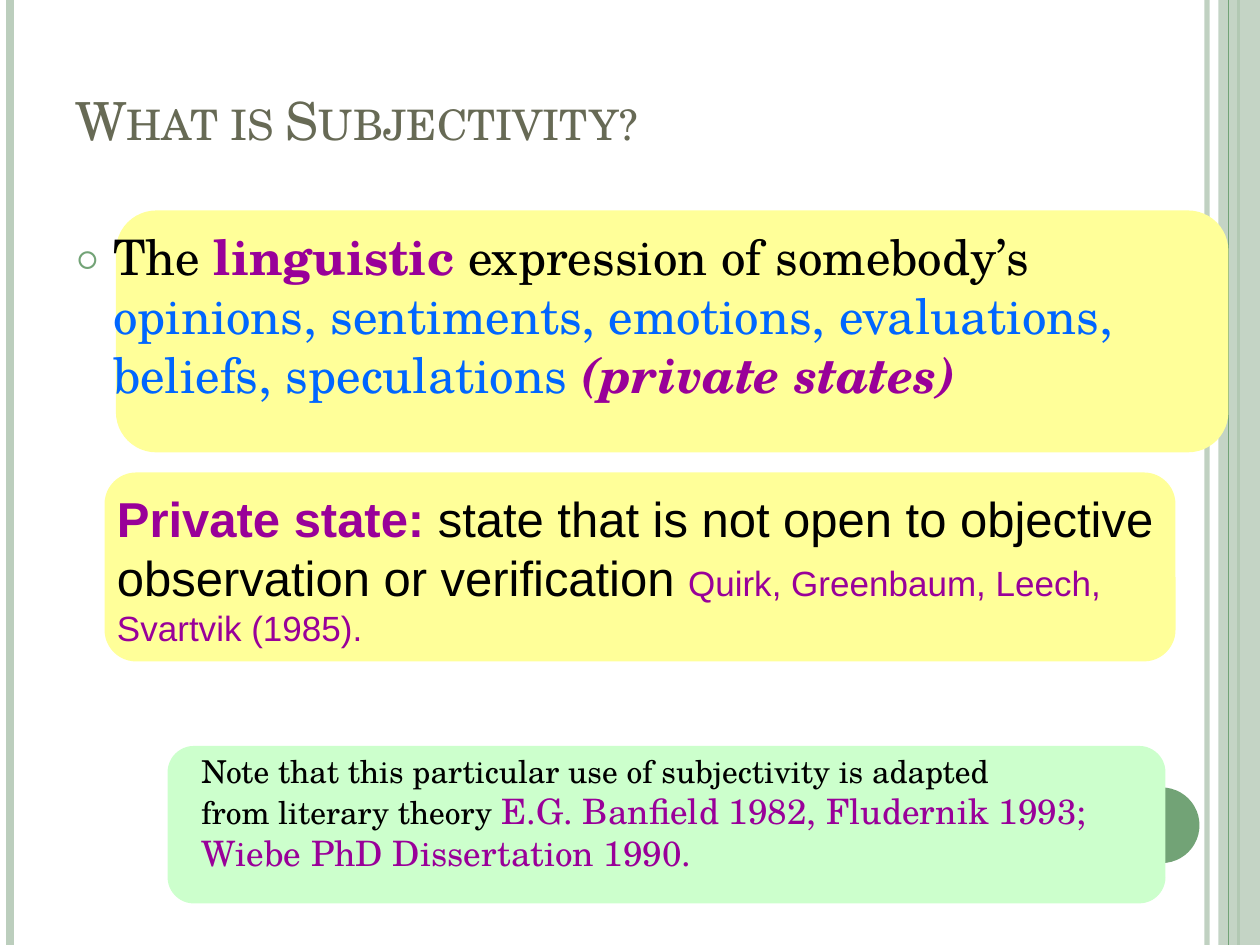
from lxml import etree
from pptx import Presentation
from pptx.dml.color import RGBColor
from pptx.enum.shapes import MSO_CONNECTOR, MSO_SHAPE
from pptx.enum.text import MSO_ANCHOR
from pptx.oxml.ns import qn
from pptx.util import Inches, Pt

STRAIGHT = MSO_CONNECTOR.STRAIGHT
RECTANGLE = MSO_SHAPE.RECTANGLE
ROUNDED = MSO_SHAPE.ROUNDED_RECTANGLE
OVAL = MSO_SHAPE.OVAL
TOP, BOTTOM = MSO_ANCHOR.TOP, MSO_ANCHOR.BOTTOM

SERIF = "TeX Gyre Schola"
SANS = "Arial"
COLORS = {
    "pale_green": "BCCEBD",
    "green": "72A376",
    "yellow": "FFFF99",
    "mint": "CCFFCC",
    "olive": "676A55",
    "black": "000000",
    "purple": "990099",
    "blue": "0066FF",
}


def rgb(name):
    return RGBColor.from_string(COLORS[name])


def set_alpha(fill_parent, percent):
    color = fill_parent.find(".//" + qn("a:srgbClr"))
    etree.SubElement(color, qn("a:alpha"), val=str(percent * 1000))


def add_rule(page, x, color, width, alpha=None):
    rule = page.shapes.add_connector(STRAIGHT, Inches(x), 0, Inches(x), Inches(7.5))
    rule.line.color.rgb = rgb(color)
    rule.line.width = Pt(width)
    properties = rule._element.spPr
    if alpha:
        set_alpha(properties, alpha)
    etree.SubElement(properties, qn("a:effectLst"))


def add_panel(page, kind, place, color, alpha=None):
    panel = page.shapes.add_shape(kind, *map(Inches, place))
    panel.shadow.inherit = False
    panel.fill.solid()
    panel.fill.fore_color.rgb = rgb(color)
    panel.line.fill.background()
    if alpha:
        set_alpha(panel._element.spPr, alpha)
    if kind == ROUNDED:
        panel.adjustments[0] = 0.167


def add_text_box(page, place, anchor=TOP, wrap=True):
    box = page.shapes.add_textbox(*map(Inches, place))
    box.text_frame.word_wrap = wrap
    box.text_frame.vertical_anchor = anchor
    return box


def add_span(para, text, size=28, font=SERIF, color="black", bold=False,
             italic=False, small_caps=False):
    span = para.add_run()
    span.text = text
    span.font.size = Pt(size)
    span.font.name = font
    span.font.color.rgb = rgb(color)
    span.font.bold = bold
    span.font.italic = italic
    if small_caps:
        span.font._element.set("cap", "small")


def add_bullet(para, mark, color, percent, indent):
    properties = para._p.get_or_add_pPr()
    properties.set("marL", str(Inches(indent)))
    properties.set("indent", str(-Inches(indent)))
    bullet_color = etree.SubElement(properties, qn("a:buClr"))
    etree.SubElement(bullet_color, qn("a:srgbClr"), val=COLORS[color])
    etree.SubElement(properties, qn("a:buSzPct"), val=str(percent * 1000))
    etree.SubElement(properties, qn("a:buFont"), typeface=SERIF)
    etree.SubElement(properties, qn("a:buChar"), char=mark)


def add_frame(page):
    add_rule(page, 9.58, "pale_green", 3, alpha=93)
    add_rule(page, 0.08, "pale_green", 4.5)
    add_rule(page, 9.83, "green", 1.5)
    add_panel(page, RECTANGLE, (9.67, 0, 0.33, 7.5), "pale_green", alpha=87)
    add_rule(page, 9.75, "green", 0.75)
    add_panel(page, OVAL, (8.92, 6.25, 0.6, 0.6), "green")


def add_title(page):
    box = add_text_box(page, (0.5, 0.3, 8.17, 0.95), anchor=BOTTOM)
    add_span(box.text_frame.paragraphs[0], "What is Subjectivity?", size=30,
             color="olive", small_caps=True)


def add_definition(page):
    box = add_text_box(page, (0.5, 1.75, 9.25, 4.92))
    para = box.text_frame.paragraphs[0]
    para.space_before = Pt(6)
    add_bullet(para, "○", "green", 70, 0.3)
    add_span(para, "The ")
    add_span(para, "linguistic ", color="purple", bold=True)
    add_span(para, "expression of somebody’s ")
    add_span(para, "opinions, sentiments, emotions, evaluations, beliefs, speculations ",
             color="blue")
    add_span(para, "(private states)", color="purple", bold=True, italic=True)


def add_private_state(page):
    frame = add_text_box(page, (0.83, 3.83, 8.58, 1.37)).text_frame
    para = frame.paragraphs[0]
    add_span(para, "Private state:", font=SANS, color="purple", bold=True)
    add_span(para, " state that is not open to objective", font=SANS)
    para = frame.add_paragraph()
    add_span(para, "observation or verification ", font=SANS)
    add_span(para, "Quirk, Greenbaum, Leech,", size=20, font=SANS, color="purple")
    add_span(para, " ", size=18, font=SANS, color="purple")
    add_span(para, "Svartvik (1985).", size=20, font=SANS, color="purple")


def add_note(page):
    frame = add_text_box(page, (1.5, 5.92, 7.26, 1.63), wrap=False).text_frame
    add_span(frame.paragraphs[0],
             "Note that this particular use of subjectivity is adapted", size=18)
    para = frame.add_paragraph()
    add_span(para, "from literary theory ", size=18)
    add_span(para, "E.G. Banfield 1982, Fludernik 1993;", size=20, color="purple")
    add_span(frame.add_paragraph(), "Wiebe PhD Dissertation 1990.", size=20,
             color="purple")


def main():
    deck = Presentation()
    deck.slide_width, deck.slide_height = Inches(10), Inches(7.5)
    page = deck.slides.add_slide(deck.slide_layouts[6])
    add_frame(page)
    add_panel(page, ROUNDED, (0.83, 3.75, 8.5, 1.5), "yellow")
    add_panel(page, ROUNDED, (0.92, 1.67, 8.83, 1.92), "yellow")
    add_panel(page, ROUNDED, (1.33, 5.92, 7.92, 1.25), "mint")
    add_title(page)
    add_definition(page)
    add_private_state(page)
    add_note(page)
    deck.save("out.pptx")


if __name__ == "__main__":
    main()
